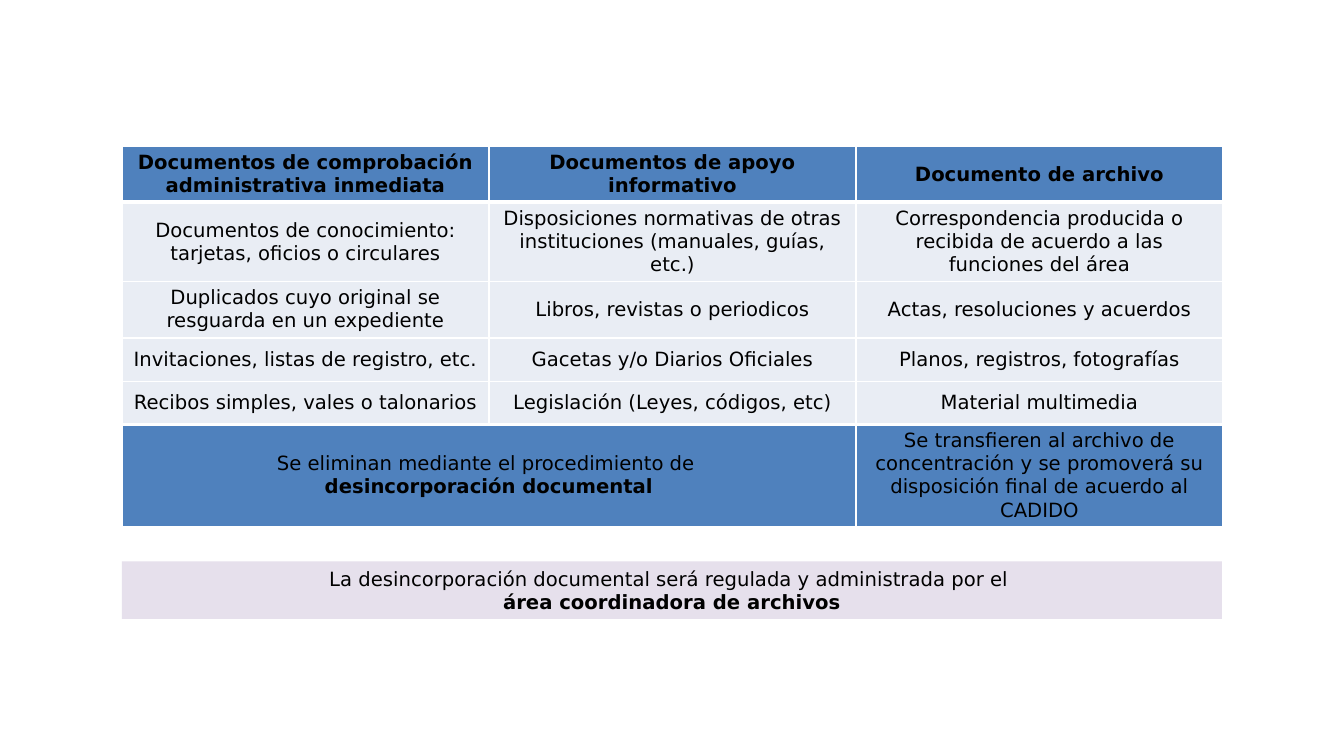
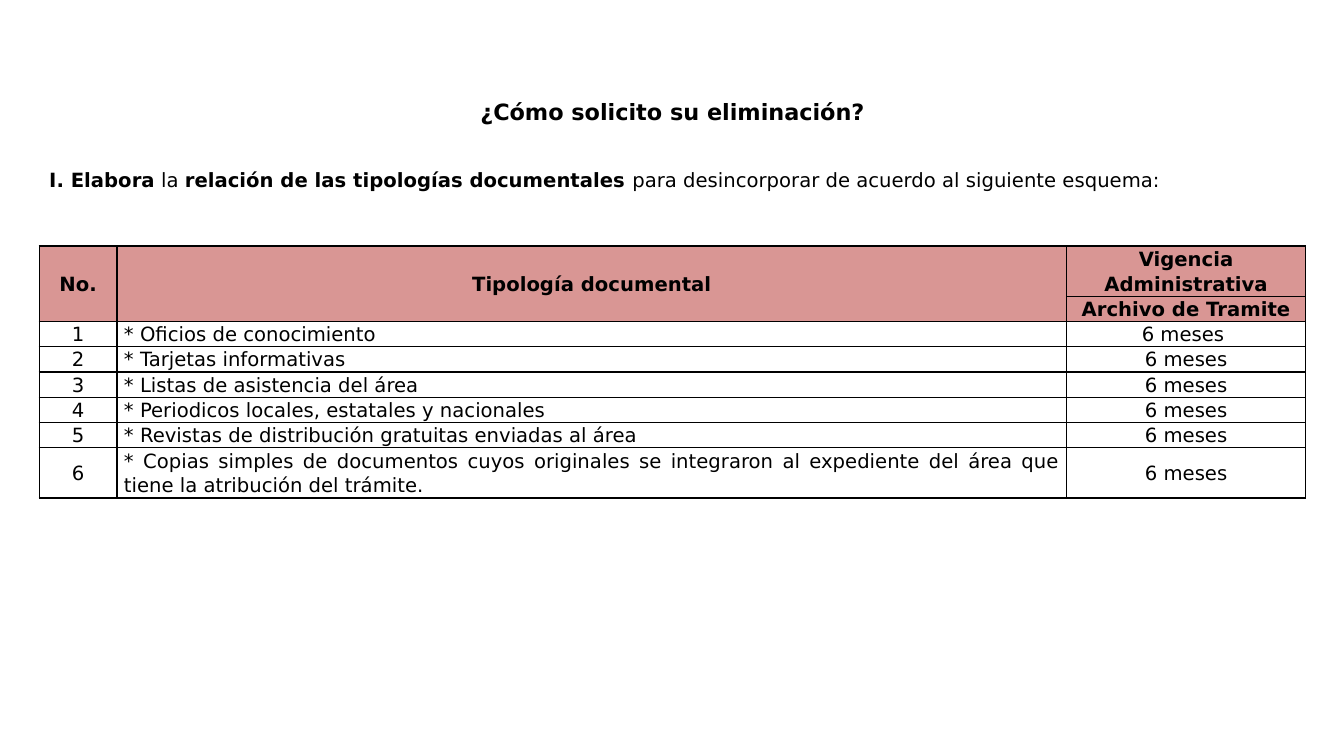
"""Build two slides on which office documents may be discarded and how."""
from lxml import etree
from pptx import Presentation, util as u
from pptx.dml.color import RGBColor
from pptx.enum import shapes, text
from pptx.oxml.ns import qn

FONT = "DejaVu Sans"
HUES = {"ink": "000000", "white": "FFFFFF", "blue": "4F81BD",
        "pale": "E9EDF4", "lilac": "E6E0EC", "rose": "D99694"}
MID, JUST = text.PP_ALIGN.CENTER, text.PP_ALIGN.JUSTIFY

KINDS = [
    ["**Documentos de comprobación administrativa inmediata",
     "**Documentos de apoyo informativo", "**Documento de archivo"],
    ["Documentos de conocimiento: tarjetas, oficios o circulares",
     "Disposiciones normativas de otras instituciones (manuales, guías, etc.)",
     "Correspondencia producida o recibida de acuerdo a las funciones del área"],
    ["Duplicados cuyo original se resguarda en un expediente",
     "Libros, revistas o periodicos", "Actas, resoluciones y acuerdos"],
    ["Invitaciones, listas de registro, etc.",
     "Gacetas y/o Diarios Oficiales", "Planos, registros, fotografías"],
    ["Recibos simples, vales o talonarios",
     "Legislación (Leyes, códigos, etc)", "Material multimedia"],
    ["Se eliminan mediante el procedimiento de \n**desincorporación documental", "",
     "Se transfieren al archivo de concentración y se promoverá su "
     "disposición final de acuerdo al CADIDO"],
]
NOTE = ("La desincorporación documental será regulada y administrada por el \n"
        "**área coordinadora de archivos")
TITLE = "**¿Cómo solicito su eliminación?"
STEP = ("**I. Elabora** la **relación de las tipologías documentales **"
        "para desincorporar de acuerdo al siguiente esquema:")
HEADS = [["**No.", "**Tipología documental", "**Vigencia Administrativa"],
         ["", "", "**Archivo de Tramite"]]
TYPES = [
    ("Oficios de conocimiento", "6 meses "),
    ("Tarjetas informativas", "6 meses"),
    ("Listas de asistencia del área", "6 meses"),
    ("Periodicos locales, estatales y nacionales", "6 meses"),
    ("Revistas de distribución gratuitas enviadas al área", "6 meses"),
    ("Copias simples de documentos cuyos originales se integraron al "
     "expediente del área que tiene la atribución del trámite.", "6 meses"),
]


def color(name):
    return RGBColor.from_string(HUES[name])


def write(frame, words, align=MID, size=14, lead=None):
    """Fill a frame; a double star switches bold on and off."""
    frame.word_wrap = True
    for i, line in enumerate(words.split("\n")):
        para = frame.add_paragraph() if i else frame.paragraphs[0]
        para.alignment = align
        if lead:
            para.line_spacing = lead
        for j, part in enumerate(line.split("**")):
            if part:
                run = para.add_run()
                run.text = part
                font = run.font
                font.name, font.size, font.bold = FONT, u.Pt(size), j % 2 == 1
                font.color.rgb = color("ink")


def edge(cell, hue, **wide):
    """Draw the four cell borders, 1 pt unless a side is given."""
    props = cell._tc.get_or_add_tcPr()
    for side in "LRTB":
        line = etree.SubElement(props, qn("a:ln" + side),
                                w=str(u.Pt(wide.get(side, 1))))
        fill = etree.SubElement(line, qn("a:solidFill"))
        etree.SubElement(fill, qn("a:srgbClr"), val=HUES[hue])


def grid(slide, left, top, cols, rows):
    """Add a plain table with the given column widths and row heights."""
    frame = slide.shapes.add_table(
        len(rows), len(cols), u.Inches(left), u.Inches(top),
        u.Inches(sum(cols)), u.Inches(sum(rows)))
    table = frame.table
    table.first_row = table.horz_banding = False
    for col, wide in zip(table.columns, cols):
        col.width = u.Inches(wide)
    for row, high in zip(table.rows, rows):
        row.height = u.Inches(high)
    return table


def paint(cell, hue):
    cell.vertical_anchor = text.MSO_ANCHOR.MIDDLE
    if hue:
        cell.fill.solid()
        cell.fill.fore_color.rgb = color(hue)
    else:
        cell.fill.background()


def place(shape, *box):
    shape.left, shape.top, shape.width, shape.height = map(u.Inches, box)


def sort_slide(deck):
    slide = deck.slides.add_slide(deck.slide_layouts[6])
    table = grid(slide, 1.21, 1.45, [3.64] * 3,
                 [0.54, 0.78, 0.56, 0.43, 0.43, 1])
    last = len(KINDS) - 1
    table.cell(last, 0).merge(table.cell(last, 1))
    for r, row in enumerate(KINDS):
        for c, words in enumerate(row):
            cell = table.cell(r, c)
            edge(cell, "white", T=3 if r in (1, last) else 1,
                 B=3 if r in (0, last - 1) else 1)
            paint(cell, "blue" if r in (0, last) else "pale")
            write(cell.text_frame, words)
    note = slide.shapes.add_shape(
        shapes.MSO_SHAPE.RECTANGLE, u.Inches(1.21), u.Inches(5.57),
        u.Inches(10.91), u.Inches(0.57))
    note.shadow.inherit = False
    note.fill.solid()
    note.fill.fore_color.rgb = color("lilac")
    note.line.fill.background()
    write(note.text_frame, NOTE)


def list_slide(deck):
    slide = deck.slides.add_slide(deck.slide_layouts[5])
    left, wide = 0.39, 12.56
    title = slide.shapes.title
    place(title, left, 0.92, wide, 0.37)
    title.text_frame.auto_size = text.MSO_AUTO_SIZE.NONE
    title.text_frame.vertical_anchor = text.MSO_ANCHOR.TOP
    write(title.text_frame, TITLE, size=16)
    step = slide.shapes.add_textbox(0, 0, 0, 0)
    place(step, left, 1.62, wide, 0.34)
    write(step.text_frame, STEP, JUST)

    rows = HEADS + [[str(n), "* " + name, term]
                    for n, (name, term) in enumerate(TYPES, 1)]
    table = grid(slide, left, 2.44, [0.77, 9.42, 2.37],
                 [0.5] + [0.25] * 6 + [0.5])
    for c in (0, 1):
        table.cell(0, c).merge(table.cell(1, c))
    for r, row in enumerate(rows):
        head = r < len(HEADS)
        for c, words in enumerate(row):
            cell = table.cell(r, c)
            edge(cell, "ink")
            paint(cell, "rose" if head else None)
            cell.margin_left = cell.margin_right = u.Inches(0.07)
            cell.margin_top = cell.margin_bottom = 0
            write(cell.text_frame, words,
                  JUST if c == 1 and not head else MID, lead=1.07)


def main():
    deck = Presentation()
    deck.slide_width, deck.slide_height = u.Inches(13.33), u.Inches(7.5)
    sort_slide(deck)
    list_slide(deck)
    deck.save("out.pptx")


if __name__ == "__main__":
    main()
